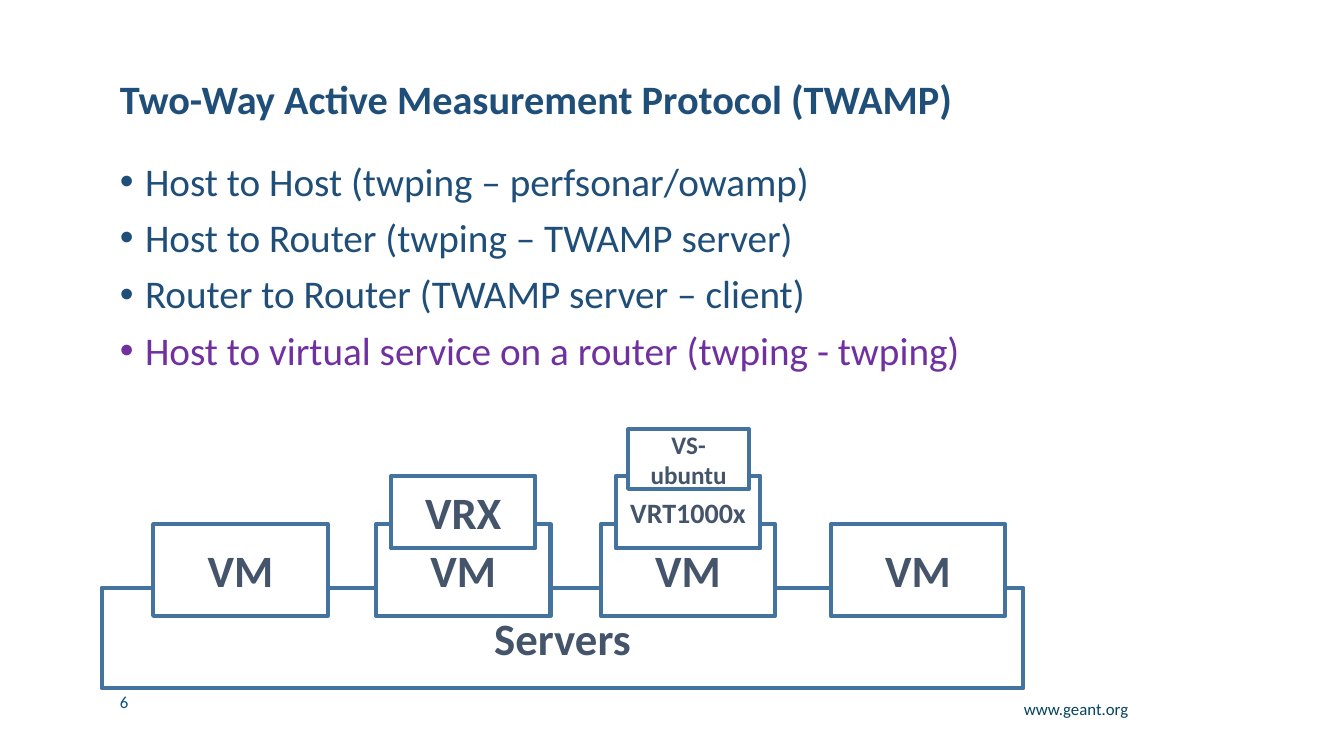
from dataclasses import dataclass

from lxml import etree
from pptx import Presentation
from pptx.dml.color import RGBColor
from pptx.enum.shapes import MSO_SHAPE
from pptx.enum.text import MSO_ANCHOR, PP_ALIGN
from pptx.oxml.ns import qn
from pptx.slide import Slide
from pptx.text.text import TextFrame, _Paragraph
from pptx.util import Inches, Pt

RECT = MSO_SHAPE.RECTANGLE
MIDDLE = MSO_ANCHOR.MIDDLE
LEFT, CENTER, RIGHT = PP_ALIGN.LEFT, PP_ALIGN.CENTER, PP_ALIGN.RIGHT

FONT = "Calibri"
COLORS = {
    "navy": "1F4E79",
    "purple": "7030A0",
    "page": "065081",
    "link": "03435F",
    "edge": "43739E",
    "label": "44546A",
    "white": "FFFFFF",
}


@dataclass
class Box:
    text: str
    left: float
    top: float
    width: float
    height: float
    size: float = 32
    filled: bool = True


@dataclass
class Point:
    text: str
    color: str = "navy"


POINTS = [
    Point("Host to Host (twping – perfsonar/owamp)"),
    Point("Host to Router (twping – TWAMP server)"),
    Point("Router to Router (TWAMP server – client)"),
    Point("Host to virtual service on a router (twping - twping)", "purple"),
]

BOXES = [
    Box("Servers", 1.01, 5.83, 9.14, 1, filled=False),
    *[Box("VM", left, 5.2, 1.73, 0.91) for left in (1.52, 3.73, 5.96, 8.24)],
    Box("VRX", 3.88, 4.72, 1.43, 0.72),
    Box("VRT1000x", 6.11, 4.72, 1.43, 0.72, 20),
    Box("VS-ubuntu", 6.23, 4.26, 1.2, 0.59, 18),
]


def tint(name: str) -> RGBColor:
    return RGBColor.from_string(COLORS[name])


def style(para: _Paragraph, size: float, color: str, bold: bool = False) -> None:
    font = para.font
    font.name = FONT
    font.size = Pt(size)
    font.bold = bold
    font.color.rgb = tint(color)


def add_frame(slide: Slide, left: float, top: float, width: float, height: float) -> TextFrame:
    shape = slide.shapes.add_textbox(Inches(left), Inches(top), Inches(width), Inches(height))
    frame = shape.text_frame
    frame.word_wrap = True
    return frame


def add_label(slide: Slide, box: Box, color: str, bold: bool = False,
              align: PP_ALIGN = LEFT, space: float = 0.9) -> TextFrame:
    frame = add_frame(slide, box.left, box.top, box.width, box.height)
    para = frame.paragraphs[0]
    para.text = box.text
    para.alignment = align
    para.line_spacing = space
    style(para, box.size, color, bold)
    return frame


def add_list(slide: Slide) -> None:
    frame = add_frame(slide, 1.09, 1.56, 9.44, 4.76)
    for index, point in enumerate(POINTS):
        para = frame.add_paragraph() if index else frame.paragraphs[0]
        para.text = point.text
        para.line_spacing = 0.9
        para.space_before = Pt(10 if index else 0)
        props = para._p.get_or_add_pPr()
        props.set("marL", str(Inches(0.25)))
        props.set("indent", str(Inches(-0.25)))
        etree.SubElement(props, qn("a:buFont"), typeface="Arial")
        etree.SubElement(props, qn("a:buChar"), char="•")
        style(para, 28, point.color)


def add_box(slide: Slide, box: Box) -> None:
    shape = slide.shapes.add_shape(
        RECT, Inches(box.left), Inches(box.top), Inches(box.width), Inches(box.height))
    shape.shadow.inherit = False
    if box.filled:
        shape.fill.solid()
        shape.fill.fore_color.rgb = tint("white")
    else:
        shape.fill.background()
    shape.line.color.rgb = tint("edge")
    shape.line.width = Pt(3)
    frame = shape.text_frame
    frame.word_wrap = True
    frame.vertical_anchor = MIDDLE
    para = frame.paragraphs[0]
    para.text = box.text
    para.alignment = CENTER
    style(para, box.size, "label", True)


def main() -> None:
    deck = Presentation()
    deck.slide_width = Inches(13.33)
    deck.slide_height = Inches(7.5)
    slide = deck.slides.add_slide(deck.slide_layouts[6])

    add_label(slide, Box("6", 1.09, 6.81, 1.45, 0.3, 12), "page", space=1.0)
    add_label(slide, Box("www.geant.org", 9.61, 6.91, 1.68, 0.37, 12), "link", align=RIGHT)
    title = Box("Two-Way Active Measurement Protocol (TWAMP)", 1.09, 0.77, 10.82, 0.47, 28.8)
    add_label(slide, title, "navy", True).vertical_anchor = MIDDLE
    add_list(slide)
    for box in BOXES:
        add_box(slide, box)

    deck.save("out.pptx")


if __name__ == "__main__":
    main()
